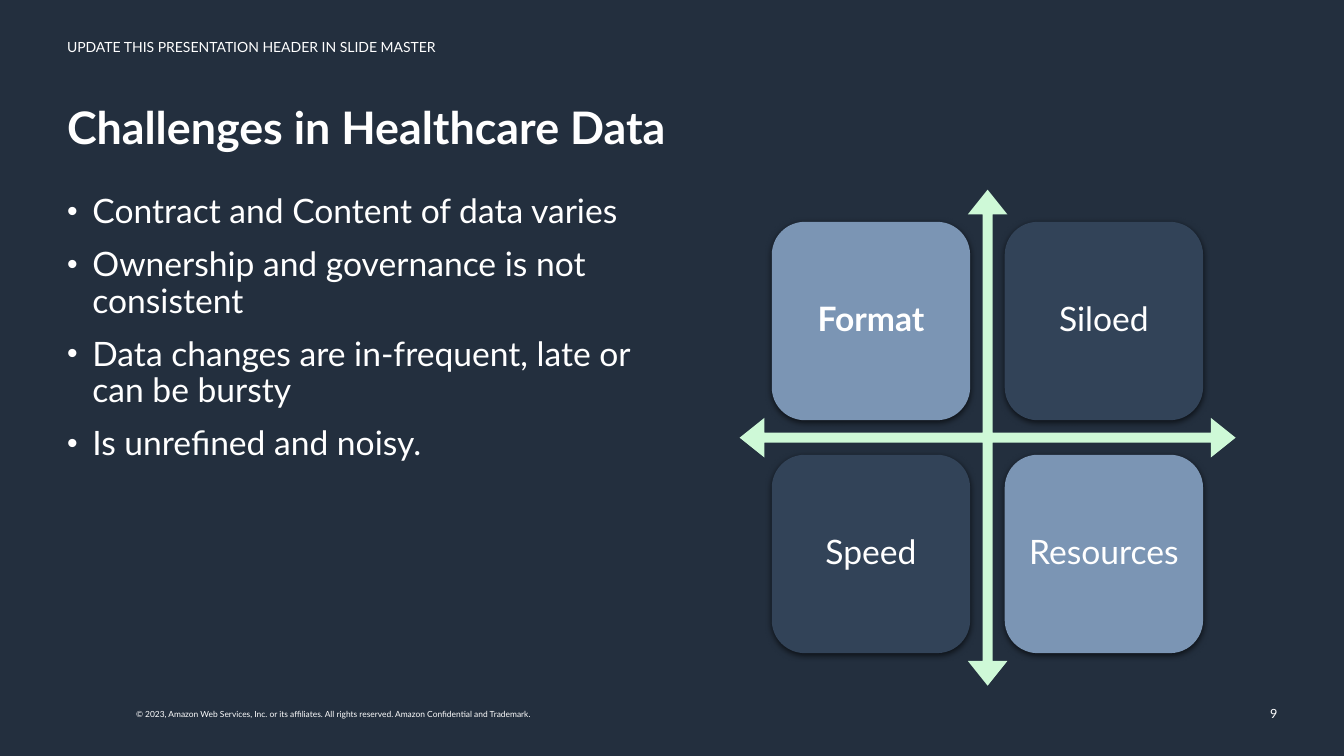
from typing import NamedTuple

from lxml import etree
from pptx import Presentation
from pptx import util as u
from pptx.dml.color import RGBColor
from pptx.enum import shapes, text
from pptx.oxml import ns

NAVY = RGBColor(0x23, 0x2F, 0x3E)
SLATE = RGBColor(0x32, 0x43, 0x58)
STEEL = RGBColor(0x7B, 0x95, 0xB4)
MINT = RGBColor(0xCE, 0xF9, 0xD7)
WHITE = RGBColor(0xFF, 0xFF, 0xFF)
FONT = "Lato"

MARGIN = 1.69
CONTENT_WIDTH = 30.48
ARROW_LEFT, ARROW_TOP, ARROW_SIZE = 18.64, 4.78, 12.5
TILE_SIZE, TILE_PITCH, TILE_OFFSET = 5.0, 5.87, 0.81


class Box(NamedTuple):
    """Left, top, width and height in centimetres."""
    left: float
    top: float
    width: float
    height: float

    def lengths(self) -> list:
        return [u.Cm(value) for value in self]


class Tile(NamedTuple):
    label: str
    column: int
    row: int
    color: RGBColor
    bold: bool = False


TILES = [
    Tile("Format", 0, 0, STEEL, bold=True),
    Tile("Siloed", 1, 0, SLATE),
    Tile("Speed", 0, 1, SLATE),
    Tile("Resources", 1, 1, STEEL),
]
CHALLENGES = [
    "Contract and Content of data varies",
    "Ownership and governance is not consistent",
    "Data changes are in-frequent, late or can be bursty",
    "Is unrefined and noisy.",
]


def add_bullet(paragraph) -> None:
    properties = paragraph._p.get_or_add_pPr()
    indent = u.Cm(0.64)
    properties.set("marL", str(indent))
    properties.set("indent", str(-indent))
    etree.SubElement(properties, ns.qn("a:buSzPct"), val="90000")
    etree.SubElement(properties, ns.qn("a:buFont"), typeface="Arial")
    etree.SubElement(properties, ns.qn("a:buChar"), char="•")


def write(shape, lines: list[str], *, size: float, bold: bool = False,
          align=text.PP_ALIGN.LEFT, anchor=text.MSO_ANCHOR.TOP,
          side_inset: float = 0, inset: float = 0.13, wrap: bool = True,
          line_spacing: float = 0.9, space_after: float = 0,
          bullets: bool = False) -> None:
    frame = shape.text_frame
    frame.word_wrap = wrap
    frame.vertical_anchor = anchor
    frame.margin_left = frame.margin_right = u.Cm(side_inset)
    frame.margin_top = frame.margin_bottom = u.Cm(inset)
    for index, line in enumerate(lines):
        paragraph = frame.add_paragraph() if index else frame.paragraphs[0]
        paragraph.alignment = align
        paragraph.line_spacing = line_spacing
        paragraph.space_after = u.Pt(space_after)
        if bullets:
            add_bullet(paragraph)
        run = paragraph.add_run()
        run.text = line
        run.font.name = FONT
        run.font.size = u.Pt(size)
        run.font.bold = bold
        run.font.color.rgb = WHITE


def add_text(slide, box: Box, lines: list[str], **text_format) -> None:
    write(slide.shapes.add_textbox(*box.lengths()), lines, **text_format)


def add_filled(slide, kind, box: Box, color: RGBColor):
    shape = slide.shapes.add_shape(kind, *box.lengths())
    shape.shadow.inherit = False
    shape.fill.solid()
    shape.fill.fore_color.rgb = color
    shape.line.fill.background()
    return shape


def add_soft_shadow(shape) -> None:
    effects = shape._element.spPr.find(ns.qn("a:effectLst"))
    shadow = etree.SubElement(
        effects, ns.qn("a:outerShdw"), blurRad=str(u.Pt(4.5)),
        dist=str(u.Pt(1.5)), dir="5400000", algn="ctr", rotWithShape="0")
    color = etree.SubElement(shadow, ns.qn("a:srgbClr"), val="000000")
    etree.SubElement(color, ns.qn("a:alpha"), val="63000")


def add_tile(slide, tile: Tile) -> None:
    box = Box(ARROW_LEFT + TILE_OFFSET + tile.column * TILE_PITCH,
              ARROW_TOP + TILE_OFFSET + tile.row * TILE_PITCH,
              TILE_SIZE, TILE_SIZE)
    shape = add_filled(slide, shapes.MSO_SHAPE.ROUNDED_RECTANGLE, box, tile.color)
    add_soft_shadow(shape)
    write(shape, [tile.label], size=24, bold=tile.bold,
          align=text.PP_ALIGN.CENTER, anchor=text.MSO_ANCHOR.MIDDLE,
          side_inset=0.25, inset=0.25)


def add_quadrants(slide) -> None:
    arrows = add_filled(slide, shapes.MSO_SHAPE.QUAD_ARROW,
                        Box(ARROW_LEFT, ARROW_TOP, ARROW_SIZE, ARROW_SIZE), MINT)
    for index, value in enumerate((0.02, 0.04, 0.05)):
        arrows.adjustments[index] = value
    for tile in TILES:
        add_tile(slide, tile)


def main() -> None:
    presentation = Presentation()
    presentation.slide_width = u.Cm(33.87)
    presentation.slide_height = u.Cm(19.05)
    slide = presentation.slides.add_slide(presentation.slide_layouts[6])
    slide.background.fill.solid()
    slide.background.fill.fore_color.rgb = NAVY

    header = add_filled(slide, shapes.MSO_SHAPE.RECTANGLE,
                        Box(MARGIN, 0.89, CONTENT_WIDTH, 0.66), NAVY)
    write(header, ["UPDATE THIS PRESENTATION HEADER IN SLIDE MASTER"],
          size=10, space_after=9)
    add_text(slide, Box(3.18, 17.75, 10.95, 0.51),
             ["© 2023, Amazon Web Services, Inc. or its affiliates. "
              "All rights reserved. Amazon Confidential and Trademark."],
             size=6, side_inset=0.25, wrap=False, line_spacing=1.0)
    add_text(slide, Box(MARGIN, 2.54, CONTENT_WIDTH, 1.5),
             ["Challenges in Healthcare Data"], size=32, bold=True)
    add_text(slide, Box(MARGIN, 4.78, 14.58, 7.09), CHALLENGES,
             size=24, space_after=12, bullets=True)
    add_text(slide, Box(24.82, 17.48, 7.62, 1.02), ["9"], size=9,
             align=text.PP_ALIGN.RIGHT, anchor=text.MSO_ANCHOR.MIDDLE,
             side_inset=0.25, line_spacing=1.0, space_after=6)
    add_quadrants(slide)
    presentation.save("out.pptx")


if __name__ == "__main__":
    main()
